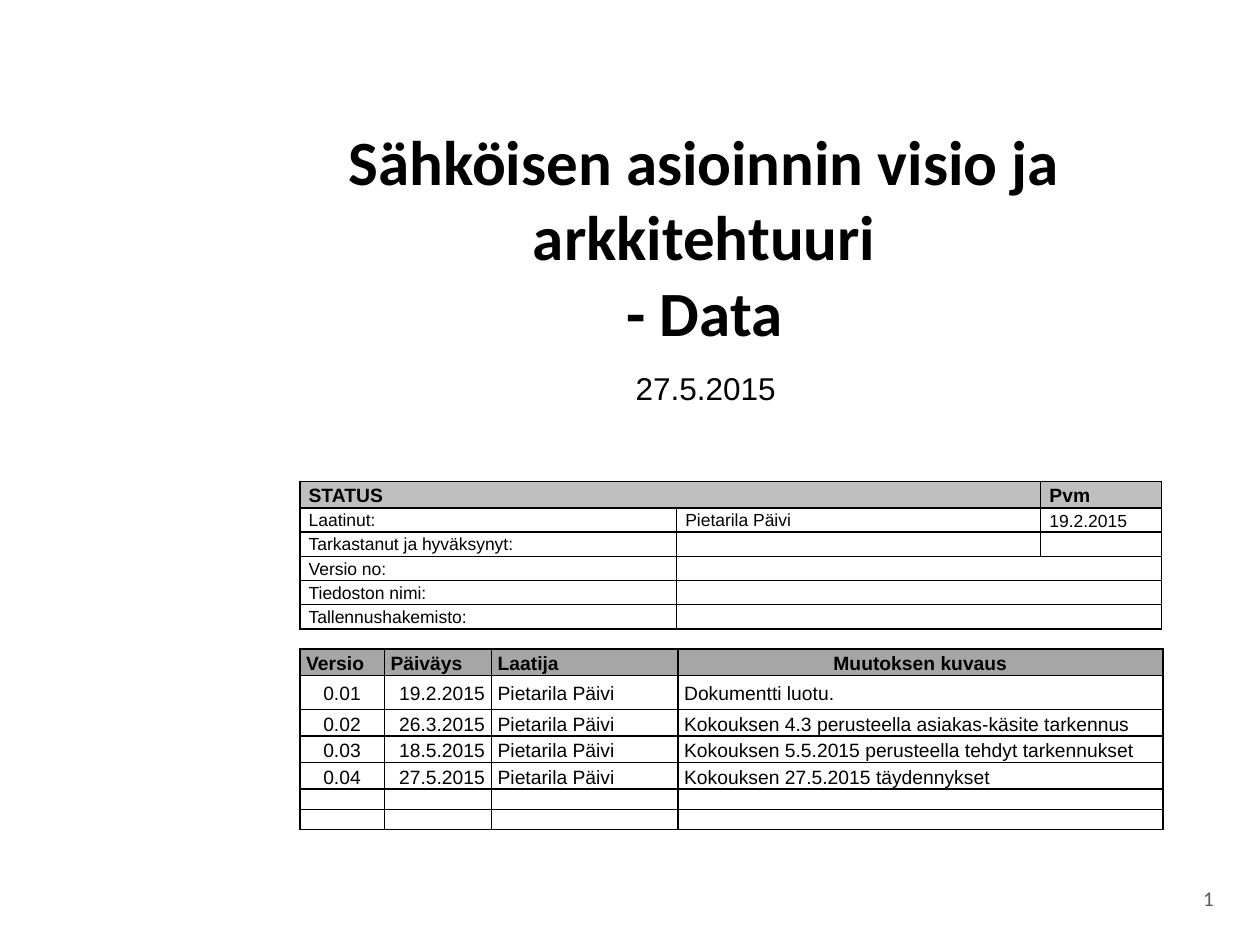
"""Build the title slide with a status table and a version history table."""
from dataclasses import dataclass

from lxml.etree import SubElement
from pptx import Presentation
from pptx.dml.color import RGBColor
from pptx.enum.text import MSO_ANCHOR as Anchor, PP_ALIGN as Align
from pptx.oxml.ns import qn
from pptx.util import Inches, Pt


@dataclass(frozen=True)
class Theme:
    """Fonts, colours and type sizes of the slide."""
    heading_font: str = "Calibri"
    body_font: str = "Arial"
    black: str = "000000"
    number_grey: str = "58585A"
    status_grey: str = "BFBFBF"
    history_grey: str = "A6A6A6"
    title_size: int = 36
    date_size: int = 18
    number_size: int = 12
    table_size: int = 11
    detail_size: int = 10
    empty_size: int = 9


THEME = Theme()


def add_run(paragraph, text, size, font=THEME.body_font, color=THEME.black, bold=False):
    """Append one formatted run to a paragraph."""
    run = paragraph.add_run()
    run.text = text
    run.font.name, run.font.size, run.font.bold = font, Pt(size), bold
    run.font.color.rgb = RGBColor.from_string(color)


def add_text(slide, box, lines, align, size, wrap=True, **style):
    """Add a text box holding one paragraph, with line breaks between lines."""
    frame = slide.shapes.add_textbox(*map(Inches, box)).text_frame
    frame.word_wrap = wrap
    paragraph = frame.paragraphs[0]
    paragraph.alignment = align
    for index, line in enumerate(lines):
        if index:
            paragraph.add_line_break()
        add_run(paragraph, line, size, **style)


def add_borders(cell):
    """Draw a thin black line on every side of a cell."""
    properties = cell._tc.get_or_add_tcPr()
    for side in ("a:lnL", "a:lnR", "a:lnT", "a:lnB"):
        line = SubElement(properties, qn(side), w=str(Pt(1)))
        fill = SubElement(line, qn("a:solidFill"))
        SubElement(fill, qn("a:srgbClr"), val=THEME.black)


def fill_cell(cell, text, size, inset, align=Align.LEFT, anchor=Anchor.MIDDLE,
              header_fill=None, space_after=0):
    """Format a cell and write its text."""
    add_borders(cell)
    if header_fill:
        cell.fill.solid()
        cell.fill.fore_color.rgb = RGBColor.from_string(header_fill)
    else:
        cell.fill.background()
    cell.margin_left = cell.margin_right = Inches(inset)
    cell.margin_top = cell.margin_bottom = 0
    cell.vertical_anchor = anchor
    paragraph = cell.text_frame.paragraphs[0]
    if text:
        paragraph.alignment = align
        paragraph.line_spacing = 1.15
        paragraph.space_after = Pt(space_after)
        add_run(paragraph, text, size, bold=bool(header_fill))
    else:
        SubElement(paragraph._p, qn("a:endParaRPr"), sz=str(THEME.empty_size * 100))


def add_grid(slide, left, top, widths, heights):
    """Add a plain table with the given column widths and row heights."""
    frame = slide.shapes.add_table(len(heights), len(widths), Inches(left), Inches(top),
                                   Inches(sum(widths)), Inches(sum(heights)))
    table = frame.table
    table.first_row = table.horz_banding = False
    for column, width in zip(table.columns, widths):
        column.width = Inches(width)
    for row, height in zip(table.rows, heights):
        row.height = Inches(height)
    return table


def add_status_table(slide):
    """Add the document status table."""
    rows = [
        ("STATUS", "", "Pvm"),
        ("Laatinut:", "Pietarila Päivi", "19.2.2015"),
        ("Tarkastanut ja hyväksynyt:", "", ""),
        ("Versio no:", "", ""),
        ("Tiedoston nimi:", "", ""),
        ("Tallennushakemisto:", "", ""),
    ]
    table = add_grid(slide, 2.38, 3.82, [2.99, 2.89, 0.96], [0.2] + [0.18] * 5)
    for r, row in enumerate(rows):
        for c, text in enumerate(row):
            if r == 0:
                style = dict(size=THEME.table_size, header_fill=THEME.status_grey)
            else:
                style = dict(size=THEME.detail_size, space_after=10,
                             anchor=Anchor.MIDDLE if c == 2 else Anchor.TOP)
            fill_cell(table.cell(r, c), text, inset=0.07, **style)
    table.cell(0, 0).merge(table.cell(0, 1))
    for r in range(3, len(rows)):
        table.cell(r, 1).merge(table.cell(r, 2))


def add_history_table(slide):
    """Add the version history table."""
    author = "Pietarila Päivi"
    rows = [
        ("Versio", "Päiväys", "Laatija", "Muutoksen kuvaus"),
        ("0.01", "19.2.2015", author, "Dokumentti luotu."),
        ("0.02", "26.3.2015", author, "Kokouksen 4.3 perusteella asiakas-käsite tarkennus"),
        ("0.03", "18.5.2015", author, "Kokouksen 5.5.2015 perusteella tehdyt tarkennukset"),
        ("0.04", "27.5.2015", author, "Kokouksen 27.5.2015 täydennykset"),
        ("",) * 4,
        ("",) * 4,
    ]
    header_aligns = [Align.LEFT] * 3 + [Align.CENTER]
    body_aligns = [Align.CENTER, Align.RIGHT, Align.LEFT, Align.LEFT]
    table = add_grid(slide, 2.38, 5.15, [0.67, 0.85, 1.48, 3.85],
                     [0.2, 0.27, 0.2, 0.2, 0.2, 0.16, 0.16])
    for r, row in enumerate(rows):
        aligns = body_aligns if r else header_aligns
        for c, text in enumerate(row):
            fill_cell(table.cell(r, c), text, THEME.table_size, 0.05, aligns[c],
                      header_fill=None if r else THEME.history_grey)


def main():
    """Build and save the slide."""
    presentation = Presentation()
    presentation.slide_width, presentation.slide_height = Inches(10), Inches(7.5)
    slide = presentation.slides.add_slide(presentation.slide_layouts[6])
    add_text(slide, (8.94, 6.98, 0.79, 0.3), ["1"], Align.RIGHT, THEME.number_size,
             font=THEME.heading_font, color=THEME.number_grey)
    add_text(slide, (1.85, 0.92, 7.48, 1.73),
             ["Sähköisen asioinnin visio ja arkkitehtuuri", "- Data"],
             Align.CENTER, THEME.title_size, font=THEME.heading_font, bold=True)
    add_status_table(slide)
    add_history_table(slide)
    add_text(slide, (4.94, 2.88, 1.32, 0.4), ["27.5.2015"], Align.CENTER,
             THEME.date_size, wrap=False)
    presentation.save("out.pptx")


if __name__ == "__main__":
    main()
